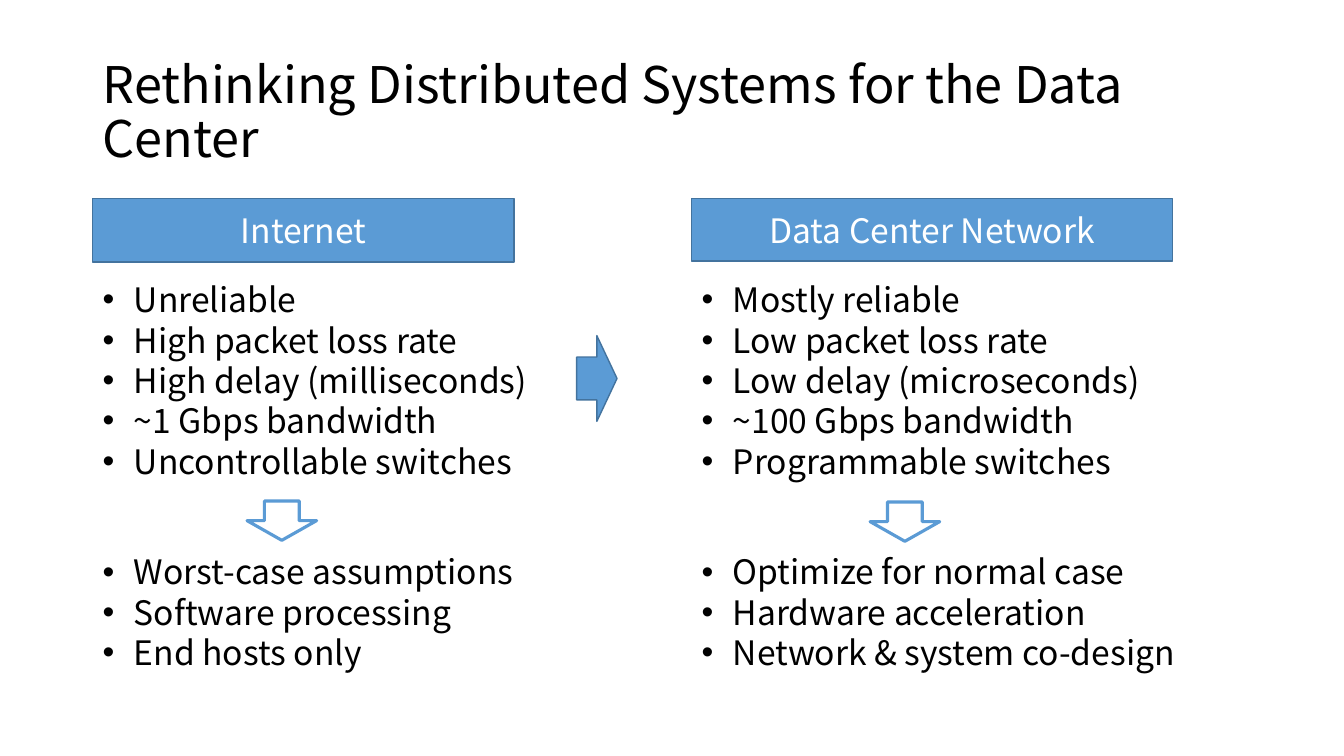
from lxml.etree import SubElement
from pptx import Presentation
from pptx.dml.color import RGBColor
from pptx.enum.shapes import MSO_SHAPE as Preset
from pptx.enum.text import MSO_ANCHOR as Anchor, MSO_AUTO_SIZE as AutoSize, PP_ALIGN as Align
from pptx.oxml.ns import qn
from pptx.util import Inches, Pt

FONT = "Noto Sans CJK SC"
COLORS = {"text": "000000", "paper": "FFFFFF", "accent": "5B9BD5", "edge": "43739E"}
TITLE = "Rethinking Distributed Systems for the Data Center"
HEADER_TOP, TRAITS_TOP, DESIGN_TOP = 1.97, 2.72, 5.42
BULLET_INDENT = Inches(0.31)

COLUMNS = [
    {
        "left": 0.92,
        "header": "Internet",
        "header_size": (4.18, 0.63),
        "traits": ["Unreliable", "High packet loss rate", "High delay (milliseconds)",
                   "~1 Gbps bandwidth", "Uncontrollable switches"],
        "traits_size": (4.74, 2.12),
        "arrow": (2.45, 4.97),
        "design": ["Worst-case assumptions", "Software processing", "End hosts only"],
        "design_size": (4.74, 1.31),
    },
    {
        "left": 6.86,
        "header": "Data Center Network",
        "header_size": (4.77, 0.62),
        "traits": ["Mostly reliable", "Low packet loss rate", "Low delay (microseconds)",
                   "~100 Gbps bandwidth", "Programmable switches"],
        "traits_size": (4.78, 2.12),
        "arrow": (8.63, 4.98),
        "design": ["Optimize for normal case", "Hardware acceleration",
                   "Network & system co-design"],
        "design_size": (5.12, 1.31),
    },
]


def color(name):
    return RGBColor.from_string(COLORS[name])


def write(paragraph, text, size=24, color_name="text", **formats):
    """Add one run of text and apply the paragraph formats."""
    run = paragraph.add_run()
    run.text = text
    for name, value in {"name": FONT, "size": Pt(size)}.items():
        setattr(run.font, name, value)
    run.font.color.rgb = color(color_name)
    for name, value in formats.items():
        setattr(paragraph, name, value)


def add_bullet(paragraph):
    properties = paragraph._p.get_or_add_pPr()
    properties.set("marL", str(BULLET_INDENT))
    properties.set("indent", str(-BULLET_INDENT))
    SubElement(properties, qn("a:buFont"), typeface="Arial")
    SubElement(properties, qn("a:buChar"), char="•")


def add_text_frame(slide, box, **formats):
    frame = slide.shapes.add_textbox(*map(Inches, box)).text_frame
    for name, value in {"word_wrap": True, **formats}.items():
        setattr(frame, name, value)
    return frame


def add_bullets(slide, box, items):
    frame = add_text_frame(slide, box, auto_size=AutoSize.SHAPE_TO_FIT_TEXT)
    for index, item in enumerate(items):
        paragraph = frame.add_paragraph() if index else frame.paragraphs[0]
        write(paragraph, item, line_spacing=Pt(28.8))
        add_bullet(paragraph)


def add_block(slide, preset, box, fill="accent", line="edge", width=1):
    shape = slide.shapes.add_shape(preset, *map(Inches, box))
    shape.shadow.inherit = False
    shape.fill.solid()
    shape.fill.fore_color.rgb = color(fill)
    shape.line.color.rgb = color(line)
    shape.line.width = Pt(width)
    return shape


def add_header(slide, box, text):
    frame = add_block(slide, Preset.RECTANGLE, box).text_frame
    frame.vertical_anchor = Anchor.MIDDLE
    write(frame.paragraphs[0], text, color_name="paper", alignment=Align.CENTER)


def add_column(slide, column):
    left = column["left"]
    add_header(slide, (left, HEADER_TOP, *column["header_size"]), column["header"])
    add_bullets(slide, (left, TRAITS_TOP, *column["traits_size"]), column["traits"])
    add_bullets(slide, (left, DESIGN_TOP, *column["design_size"]), column["design"])
    add_block(slide, Preset.DOWN_ARROW, (*column["arrow"], 0.69, 0.39),
              fill="paper", line="accent", width=2.25)


def main():
    presentation = Presentation()
    presentation.slide_width = Inches(13.33)
    presentation.slide_height = Inches(7.5)
    slide = presentation.slides.add_slide(presentation.slide_layouts[6])

    title = add_text_frame(slide, (0.92, 0.4, 11.5, 1.45), vertical_anchor=Anchor.MIDDLE)
    write(title.paragraphs[0], TITLE, size=36, line_spacing=Pt(38.9))
    for column in COLUMNS:
        add_column(slide, column)
    add_block(slide, Preset.RIGHT_ARROW, (5.72, 3.33, 0.4, 0.85))

    presentation.save("out.pptx")


if __name__ == "__main__":
    main()
